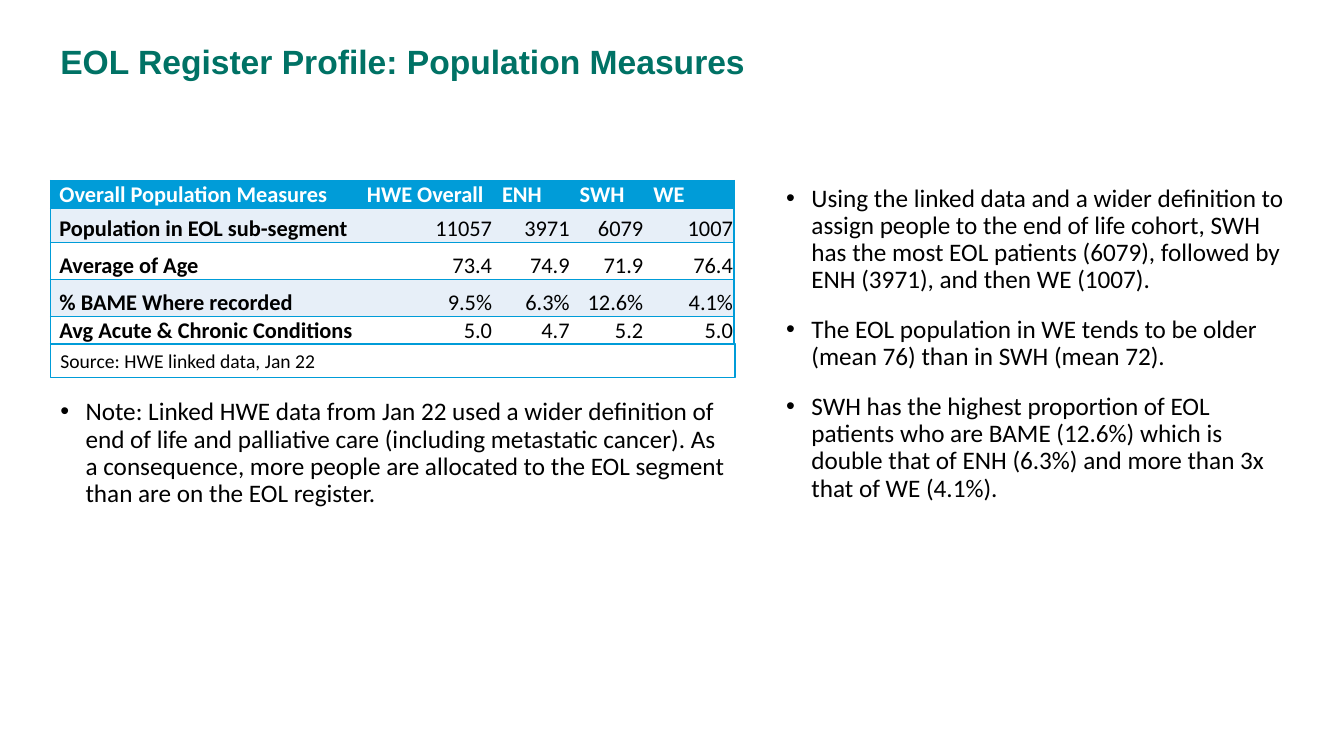
"""Build the end of life register slide with its population table and comments."""
from dataclasses import dataclass
from typing import Any

from lxml import etree
from pptx import Presentation
from pptx.dml.color import RGBColor
from pptx.enum import shapes, text
from pptx.oxml import ns
from pptx.util import Inches, Pt


@dataclass(frozen=True)
class Theme:
    heading_font: str = "Arial"
    body_font: str = "Calibri"
    green: str = "007265"
    blue: str = "009CD8"
    band: str = "E7EFF8"
    white: str = "FFFFFF"
    black: str = "000000"
    title_size: int = 24
    body_size: int = 18
    table_size: int = 16
    source_size: int = 14


@dataclass(frozen=True)
class Box:
    left: float
    top: float
    width: float
    height: float

    def lengths(self) -> list[int]:
        return [Inches(value) for value in (self.left, self.top, self.width, self.height)]


@dataclass(frozen=True)
class TextBlock:
    box: Box
    paragraphs: tuple[str, ...]
    font: str
    size: int
    color: str
    bold: bool = False
    bulleted: bool = False


@dataclass(frozen=True)
class TableRow:
    height: float
    values: tuple[str, ...]


THEME = Theme()
LEFT, TABLE_TOP, LEFT_WIDTH = 0.5, 1.79, 6.79
BLOCKS = (
    TextBlock(Box(LEFT, 0.4, 12.43, 1.45), ("EOL Register Profile: Population Measures",),
              THEME.heading_font, THEME.title_size, THEME.green, bold=True),
    TextBlock(Box(7.7, TABLE_TOP, 5.23, 4.21), (
        "Using the linked data and a wider definition to assign people to the end of life cohort, "
        "SWH has the most EOL patients (6079), followed by ENH (3971), and then WE (1007).",
        "The EOL population in WE tends to be older (mean 76) than in SWH (mean 72).",
        "SWH has the highest proportion of EOL patients who are BAME (12.6%) which is double "
        "that of ENH (6.3%) and more than 3x that of WE (4.1%).",
    ), THEME.body_font, THEME.body_size, THEME.black, bulleted=True),
    TextBlock(Box(LEFT, 3.91, LEFT_WIDTH, 2.21), (
        "Note: Linked HWE data from Jan 22 used a wider definition of end of life and palliative "
        "care (including metastatic cancer). As a consequence, more people are allocated to the "
        "EOL segment than are on the EOL register.",
    ), THEME.body_font, THEME.body_size, THEME.black, bulleted=True),
)
COLUMN_WIDTHS = (3.05, 1.34, 0.77, 0.73, 0.89)
TABLE_ROWS = (
    TableRow(0.21, ("Overall Population Measures", "HWE Overall", "ENH", "SWH", "WE")),
    TableRow(0.34, ("Population in EOL sub-segment", "11057", "3971", "6079", "1007")),
    TableRow(0.37, ("Average of Age", "73.4", "74.9", "71.9", "76.4")),
    TableRow(0.36, ("% BAME Where recorded", "9.5%", "6.3%", "12.6%", "4.1%")),
    TableRow(0.24, ("Avg Acute & Chronic Conditions", "5.0", "4.7", "5.2", "5.0")),
)
CELL_FORMAT = {
    "margin_left": Inches(0.01), "margin_right": Inches(0.01),
    "margin_top": Inches(0.01), "margin_bottom": 0,
    "vertical_anchor": text.MSO_ANCHOR.BOTTOM,
}
BULLET_FORMAT = {"line_spacing": 0.9, "space_after": Pt(6)}


def apply_format(target: Any, values: dict[str, Any]) -> None:
    for name, value in values.items():
        setattr(target, name, value)


def add_run(paragraph: Any, content: str, font: str, size: int, color: str,
            bold: bool = False) -> None:
    run = paragraph.add_run()
    run.text = content
    apply_format(run.font, {"name": font, "size": Pt(size), "bold": bold})
    run.font.color.rgb = RGBColor.from_string(color)


def add_bullet(paragraph: Any) -> None:
    properties = paragraph._p.get_or_add_pPr()
    properties.set("marL", str(Inches(0.25)))
    properties.set("indent", str(-Inches(0.25)))
    etree.SubElement(properties, ns.qn("a:buFont")).set("typeface", "Arial")
    etree.SubElement(properties, ns.qn("a:buChar")).set("char", "•")


def add_text_block(slide: Any, block: TextBlock) -> None:
    frame = slide.shapes.add_textbox(*block.box.lengths()).text_frame
    frame.word_wrap = True
    for index, content in enumerate(block.paragraphs):
        paragraph = frame.add_paragraph() if index else frame.paragraphs[0]
        if block.bulleted:
            add_bullet(paragraph)
            apply_format(paragraph, BULLET_FORMAT)
        paragraph.line_spacing = 0.9
        if index:
            paragraph.space_before = Pt(10)
        add_run(paragraph, content, block.font, block.size, block.color, block.bold)


def set_borders(cell: Any, sides: str) -> None:
    properties = cell._tc.get_or_add_tcPr()
    for side in "LRTB":
        line = etree.SubElement(properties, ns.qn(f"a:ln{side}"))
        if side in sides:
            line.set("w", str(Pt(1)))
            fill = etree.SubElement(line, ns.qn("a:solidFill"))
            etree.SubElement(fill, ns.qn("a:srgbClr")).set("val", THEME.blue)
        else:
            etree.SubElement(line, ns.qn("a:noFill"))


def fill_cell(cell: Any, content: str, row: int, column: int) -> None:
    header, label = row == 0, column == 0
    last = column == len(COLUMN_WIDTHS) - 1
    set_borders(cell, "TB" + "L" * label + "R" * last)
    cell.fill.solid()
    shade = THEME.blue if header else THEME.band if row % 2 else THEME.white
    cell.fill.fore_color.rgb = RGBColor.from_string(shade)
    apply_format(cell, CELL_FORMAT)
    paragraph = cell.text_frame.paragraphs[0]
    paragraph._p.get_or_add_pPr().set("marL", str(Inches(0.08)))
    paragraph.alignment = text.PP_ALIGN.LEFT if header or label else text.PP_ALIGN.RIGHT
    add_run(paragraph, content, THEME.body_font, THEME.table_size,
            THEME.white if header else THEME.black, header or label)


def add_measures_table(slide: Any) -> None:
    box = Box(LEFT, TABLE_TOP, LEFT_WIDTH, 1.63)
    table = slide.shapes.add_table(len(TABLE_ROWS), len(COLUMN_WIDTHS), *box.lengths()).table
    apply_format(table, {"first_row": False, "horz_banding": False})
    for column, width in zip(table.columns, COLUMN_WIDTHS):
        column.width = Inches(width)
    for row_index, row in enumerate(TABLE_ROWS):
        table.rows[row_index].height = Inches(row.height)
        for column_index, content in enumerate(row.values):
            fill_cell(table.cell(row_index, column_index), content, row_index, column_index)


def add_source_box(slide: Any) -> None:
    box = Box(LEFT, 3.41, LEFT_WIDTH, 0.34)
    shape = slide.shapes.add_shape(shapes.MSO_SHAPE.RECTANGLE, *box.lengths())
    shape.shadow.inherit = False
    shape.fill.background()
    shape.line.color.rgb = RGBColor.from_string(THEME.blue)
    shape.line.width = Pt(0.75)
    apply_format(shape.text_frame, {
        "word_wrap": True, "vertical_anchor": text.MSO_ANCHOR.TOP,
        "auto_size": text.MSO_AUTO_SIZE.SHAPE_TO_FIT_TEXT,
    })
    paragraph = shape.text_frame.paragraphs[0]
    paragraph.alignment = text.PP_ALIGN.LEFT
    add_run(paragraph, "Source: HWE linked data, Jan 22", THEME.body_font,
            THEME.source_size, THEME.black)


def main() -> None:
    presentation = Presentation()
    apply_format(presentation, {"slide_width": Inches(13.33), "slide_height": Inches(7.5)})
    slide = presentation.slides.add_slide(presentation.slide_layouts[6])
    title, findings, note = BLOCKS
    add_text_block(slide, title)
    add_measures_table(slide)
    add_text_block(slide, findings)
    add_source_box(slide)
    add_text_block(slide, note)
    presentation.save("out.pptx")


if __name__ == "__main__":
    main()
